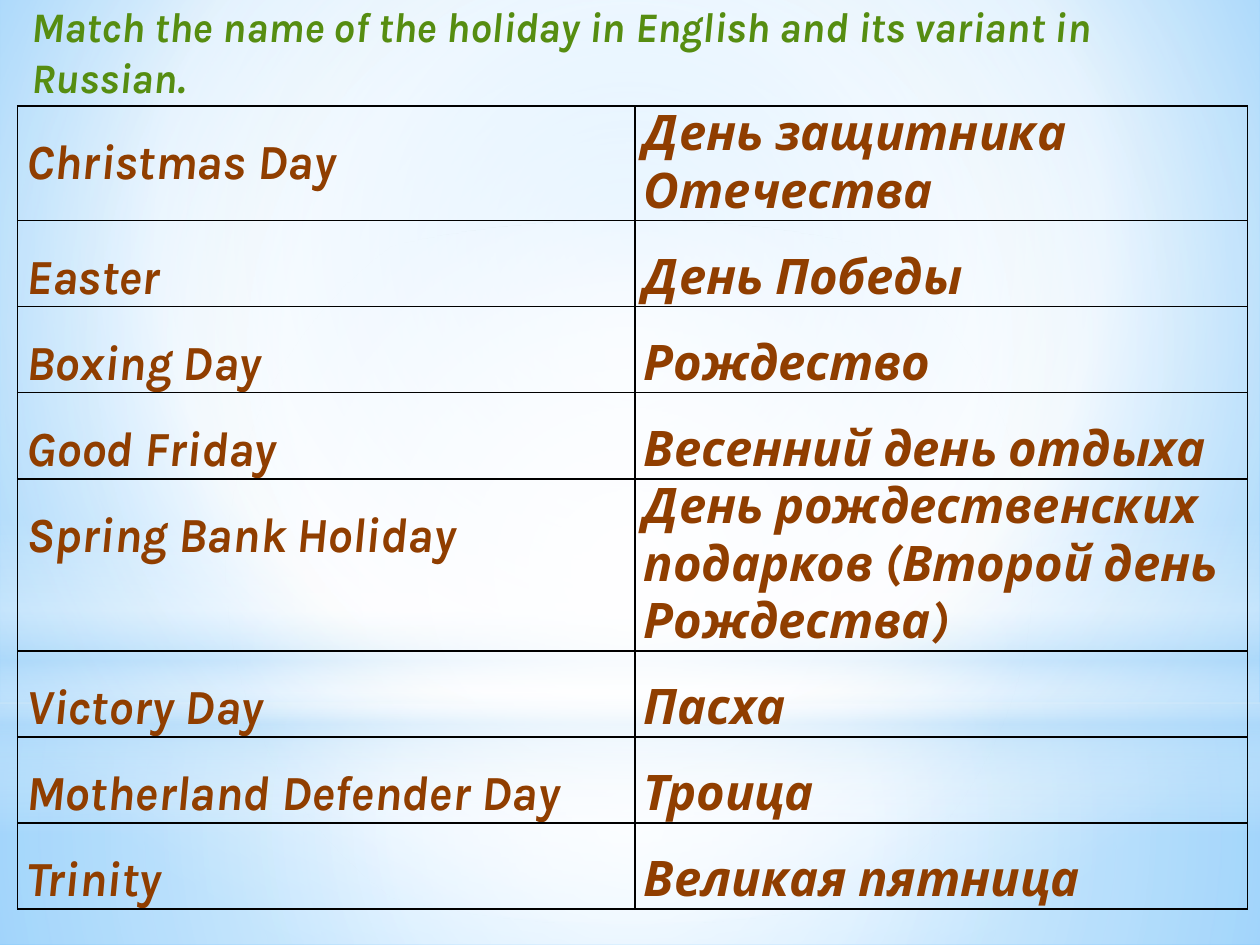
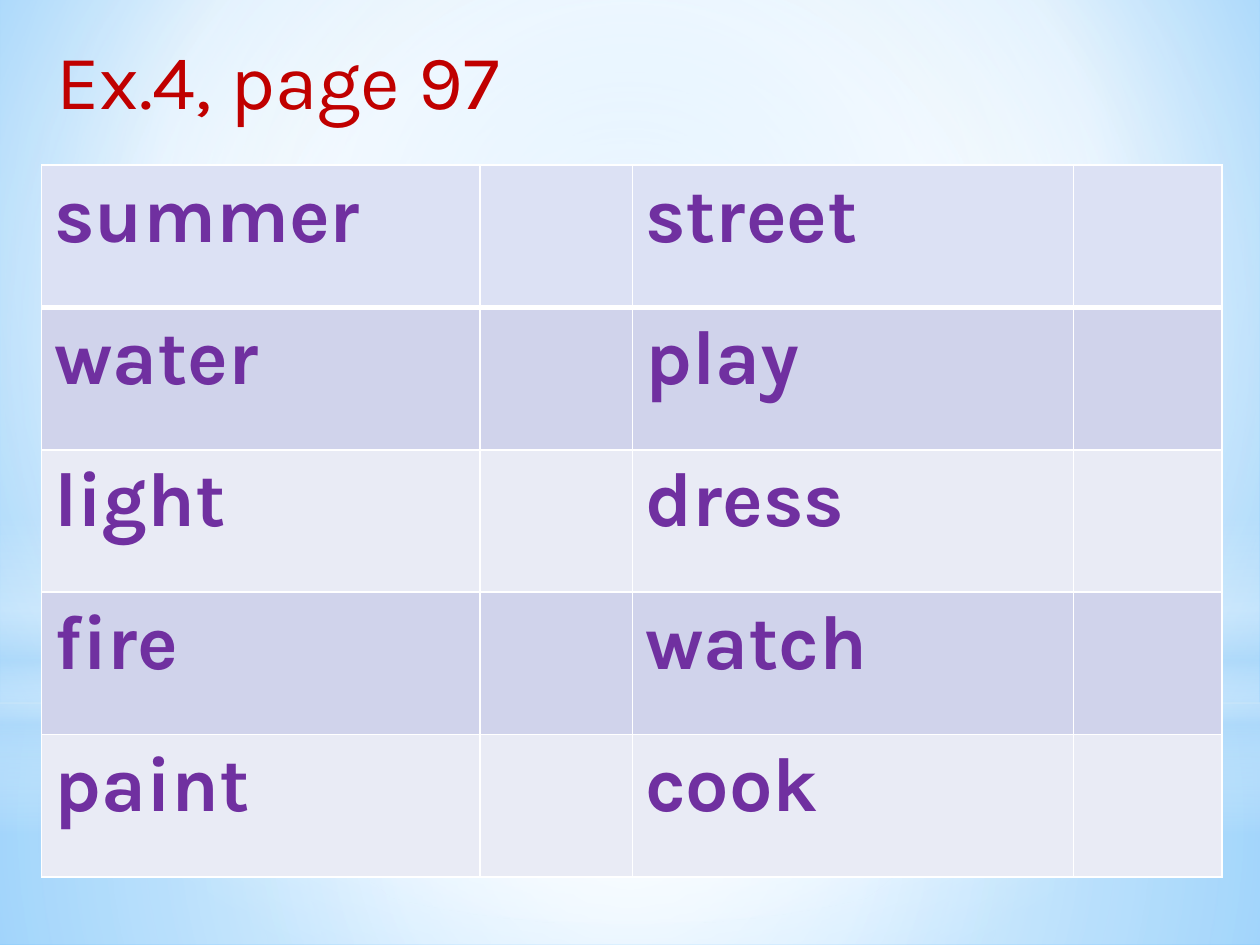
from lxml import etree
from pptx import Presentation
from pptx.dml.color import RGBColor
from pptx.enum.shapes import MSO_SHAPE
from pptx.enum.text import MSO_ANCHOR
from pptx.oxml.ns import qn
from pptx.util import Inches, Pt

RECT, OVAL = MSO_SHAPE.RECTANGLE, MSO_SHAPE.OVAL
TOP, MIDDLE = MSO_ANCHOR.TOP, MSO_ANCHOR.MIDDLE

FONT = "Karla"
WHITE, BLACK, SKY = "FFFFFF", "000000", "B4DCFA"
GREEN, BROWN, RED, PURPLE = "568D11", "903E00", "C00000", "7030A0"
HEADER_FILL, BAND_FILLS = "DCE1F4", ("E9EBF5", "D0D3EB")
CENTER = (50, 50, 50, 50)
WRAPPING_LENGTH = 24

BACKDROP = [(0, "9ED5FF", 100), (60, WHITE, 100), (100, "5BB9FF", 100)]
GLOWS = [
    (RECT, (0, 5.58, 10, 1.92), [(0, WHITE, 91), (37, WHITE, 76), (100, SKY, 79)], CENTER),
    (RECT, (0, 0, 10, 5.58), [(0, WHITE, 89), (48, WHITE, 62), (100, SKY, 79)], CENTER),
    (RECT, (0, 4.12, 10, 2.5), [(0, WHITE, 0), (29, WHITE, 30), (45, SKY, 40),
                                (55, WHITE, 26), (65, SKY, 60), (100, WHITE, 0)], None),
    (OVAL, (0, 1.75, 10, 5.58), [(0, WHITE, 100), (56, WHITE, 0)], CENTER),
]

HOLIDAYS = [
    ("Christmas Day", "День защитника Отечества"),
    ("Easter", "День Победы"),
    ("Boxing Day", "Рождество"),
    ("Good Friday", "Весенний день отдыха"),
    ("Spring Bank Holiday", "День рождественских подарков (Второй день Рождества)"),
    ("Victory Day", "Пасха"),
    ("Motherland Defender Day", "Троица"),
    ("Trinity", "Великая пятница"),
]
HOLIDAY_HEIGHTS = [0.63, 0.63, 0.55, 0.63, 1.1, 0.59, 0.63, 0.63]

WORDS = [
    ("summer", "", "street", ""),
    ("water", "", "play", ""),
    ("light", "", "dress", ""),
    ("fire", "", "watch", ""),
    ("paint", "", "cook", ""),
]


def rgb(value):
    return RGBColor.from_string(value)


def child(parent, tag, **attrs):
    return etree.SubElement(parent, qn(tag), {k: str(v) for k, v in attrs.items()})


def set_gradient(owner, fill, stops, focus):
    fill.gradient()
    grad = next(owner.element.iter(qn("a:gradFill")))
    for old in list(grad):
        grad.remove(old)
    stop_list = child(grad, "a:gsLst")
    for position, color, opacity in stops:
        clr = child(child(stop_list, "a:gs", pos=position * 1000), "a:srgbClr", val=color)
        if opacity < 100:
            child(clr, "a:alpha", val=opacity * 1000)
    if focus:
        sides = {side: value * 1000 for side, value in zip("ltrb", focus)}
        child(child(grad, "a:path", path="circle"), "a:fillToRect", **sides)
    else:
        child(grad, "a:lin", ang=90 * 60000, scaled=0)


def add_glow(s, kind, box, stops, focus):
    sp = s.shapes.add_shape(kind, *map(Inches, box))
    sp.shadow.inherit = False
    sp.line.fill.background()
    set_gradient(sp, sp.fill, stops, focus)


def add_slide(prs):
    s = prs.slides.add_slide(prs.slide_layouts[6])
    set_gradient(s, s.background.fill, BACKDROP, (20, 10, 20, 60))
    for glow in GLOWS:
        add_glow(s, *glow)
    return s


def write(tf, text, size, color, bold=False, italic=False, spacing=None):
    p = tf.paragraphs[0]
    if spacing:
        p.line_spacing = spacing
    r = p.add_run()
    r.text = text
    font = r.font
    font.name, font.size, font.bold, font.italic = FONT, Pt(size), bold, italic
    font.color.rgb = rgb(color)


def add_title(s, text, box, anchor=TOP, wrap=True, inset=0.05, **style):
    tf = s.shapes.add_textbox(*map(Inches, box)).text_frame
    tf.word_wrap = wrap
    tf.vertical_anchor = anchor
    tf.margin_top = tf.margin_bottom = Inches(inset)
    write(tf, text, **style)


def set_borders(cell, color, **widths):
    tc_pr = cell._tc.get_or_add_tcPr()
    for i, side in enumerate("LRTB"):
        ln = child(tc_pr, f"a:ln{side}", w=Pt(widths.get(side, 1)))
        child(child(ln, "a:solidFill"), "a:srgbClr", val=color)
        tc_pr.insert(i, ln)


def add_grid(s, rows, left, top, widths, heights):
    frame = s.shapes.add_table(len(rows), len(widths), Inches(left), Inches(top),
                               Inches(sum(widths)), Inches(sum(heights)))
    table = frame.table
    table.first_row = table.horz_banding = False
    for column, width in zip(table.columns, widths):
        column.width = Inches(width)
    for row, height in zip(table.rows, heights):
        row.height = Inches(height)
    for i, texts in enumerate(rows):
        for j, text in enumerate(texts):
            yield i, table.cell(i, j), text


def add_holiday_table(s):
    for _, cell, text in add_grid(s, HOLIDAYS, 0.14, 0.84, [4.9, 4.86], HOLIDAY_HEIGHTS):
        cell.margin_left = cell.margin_right = Inches(0.07)
        cell.margin_top = cell.margin_bottom = 0
        cell.fill.background()
        set_borders(cell, BLACK)
        write(cell.text_frame, text, 28, BROWN, bold=True, italic=True,
              spacing=1.5 if len(text) < WRAPPING_LENGTH else None)


def add_word_table(s):
    heights = [1.13] * len(WORDS)
    for i, cell, text in add_grid(s, WORDS, 0.33, 1.31, [3.48, 1.21, 3.5, 1.18], heights):
        cell.fill.solid()
        cell.fill.fore_color.rgb = rgb(BAND_FILLS[i % 2] if i else HEADER_FILL)
        set_borders(cell, WHITE, T=3 if i == 1 else 1, B=1 if i else 3)
        if text:
            write(cell.text_frame, text, 44, PURPLE, bold=True)


def main():
    prs = Presentation()
    prs.slide_width, prs.slide_height = Inches(10), Inches(7.5)

    s = add_slide(prs)
    add_holiday_table(s)
    add_title(s, "Match the name of the holiday in English and its variant in Russian.",
              (0.15, 0, 9.73, 0.81), anchor=MIDDLE, inset=0,
              size=24, color=GREEN, bold=True, italic=True)

    s = add_slide(prs)
    add_title(s, "Ex.4, page 97", (0.35, 0.21, 3.95, 0.84), wrap=False, size=44, color=RED)
    add_word_table(s)

    prs.save("out.pptx")


if __name__ == "__main__":
    main()
